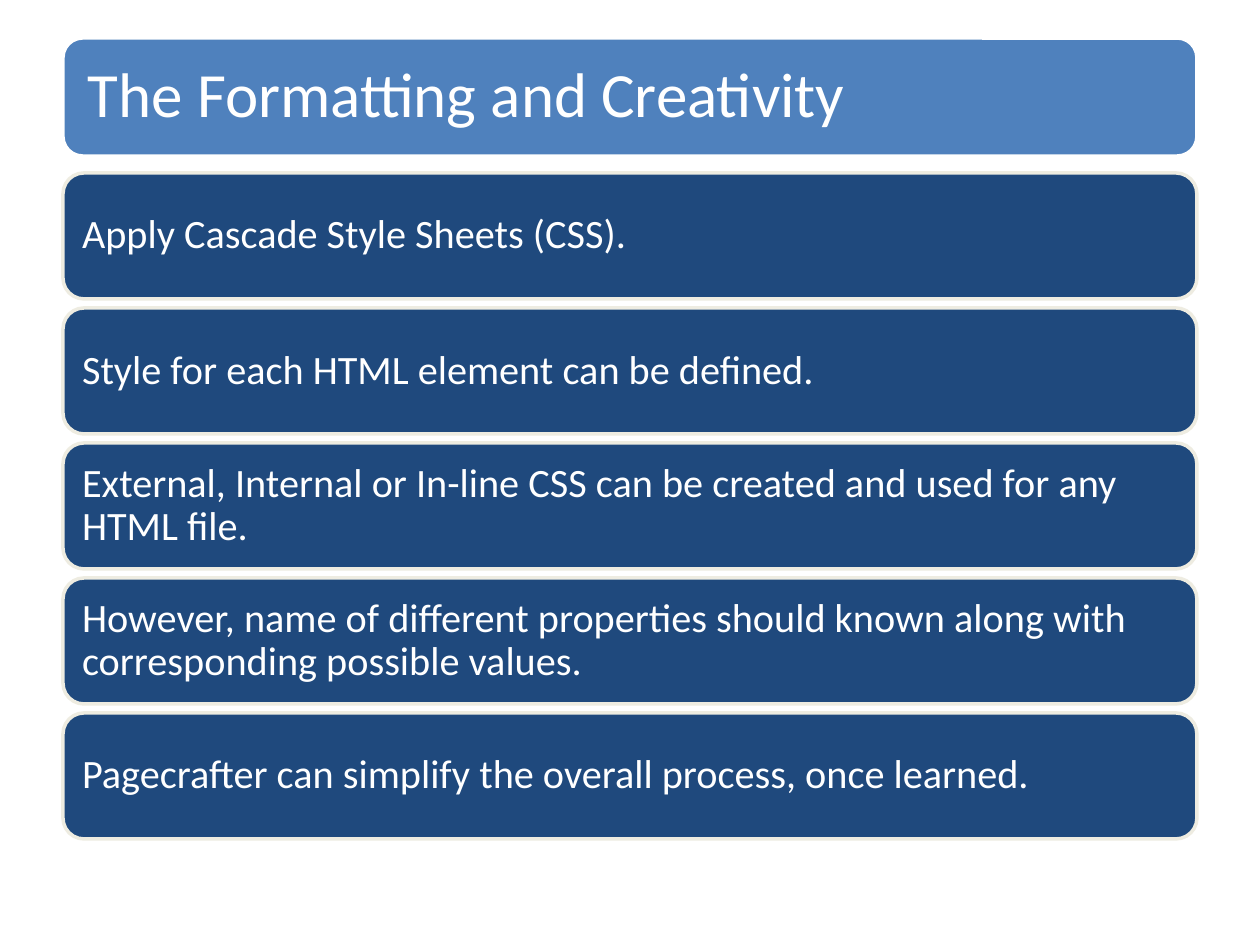
from pptx import Presentation
from pptx.dml.color import RGBColor
from pptx.enum.shapes import MSO_SHAPE
from pptx.enum.text import MSO_ANCHOR, PP_ALIGN
from pptx.util import Emu, Pt

PX_PER_INCH = 126
SLIDE_WIDTH, SLIDE_HEIGHT = 1260, 945
LEFT, WIDTH = 63, 1134
TITLE_TOP, TITLE_HEIGHT = 38, 118
BAR_TOP, BAR_HEIGHT, BAR_PITCH = 173, 126, 135

WHITE = RGBColor(0xFF, 0xFF, 0xFF)
BLUE = RGBColor(0x4F, 0x81, 0xBD)
NAVY = RGBColor(0x1F, 0x49, 0x7D)
CREAM = RGBColor(0xEE, 0xEC, 0xE1)

TITLE = "The Formatting and Creativity"
POINTS = [
    "Apply Cascade Style Sheets (CSS).",
    "Style for each HTML element can be defined.",
    "External, Internal or In-line CSS can be created and used for any HTML file.",
    "However, name of different properties should known along with corresponding possible values.",
    "Pagecrafter can simplify the overall process, once learned.",
]


def px(length):
    return Emu(round(length * 914400 / PX_PER_INCH))


def add_bar(slide, text, top, height, fill, outline, size, inset):
    """Add a full-width rounded bar with left-aligned white text."""
    shape = slide.shapes.add_shape(
        MSO_SHAPE.ROUNDED_RECTANGLE, px(LEFT), px(top), px(WIDTH), px(height))
    shape.shadow.inherit = False
    shape.fill.solid()
    shape.fill.fore_color.rgb = fill
    shape.line.color.rgb = outline
    shape.line.width = Pt(2)

    frame = shape.text_frame
    frame.word_wrap = True
    frame.vertical_anchor = MSO_ANCHOR.MIDDLE
    frame.margin_left = frame.margin_right = px(inset)
    frame.margin_top = frame.margin_bottom = px(inset)

    paragraph = frame.paragraphs[0]
    paragraph.text = text
    paragraph.alignment = PP_ALIGN.LEFT
    paragraph.line_spacing = 0.9
    paragraph.font.name = "Calibri"
    paragraph.font.size = Pt(size)
    paragraph.font.color.rgb = WHITE


def main():
    presentation = Presentation()
    presentation.slide_width = px(SLIDE_WIDTH)
    presentation.slide_height = px(SLIDE_HEIGHT)
    slide = presentation.slides.add_slide(presentation.slide_layouts[6])

    add_bar(slide, TITLE, TITLE_TOP, TITLE_HEIGHT, BLUE, WHITE, size=36, inset=19)
    for row, point in enumerate(POINTS):
        add_bar(slide, point, BAR_TOP + row * BAR_PITCH, BAR_HEIGHT,
                NAVY, CREAM, size=23, inset=13)

    presentation.save("out.pptx")


if __name__ == "__main__":
    main()
